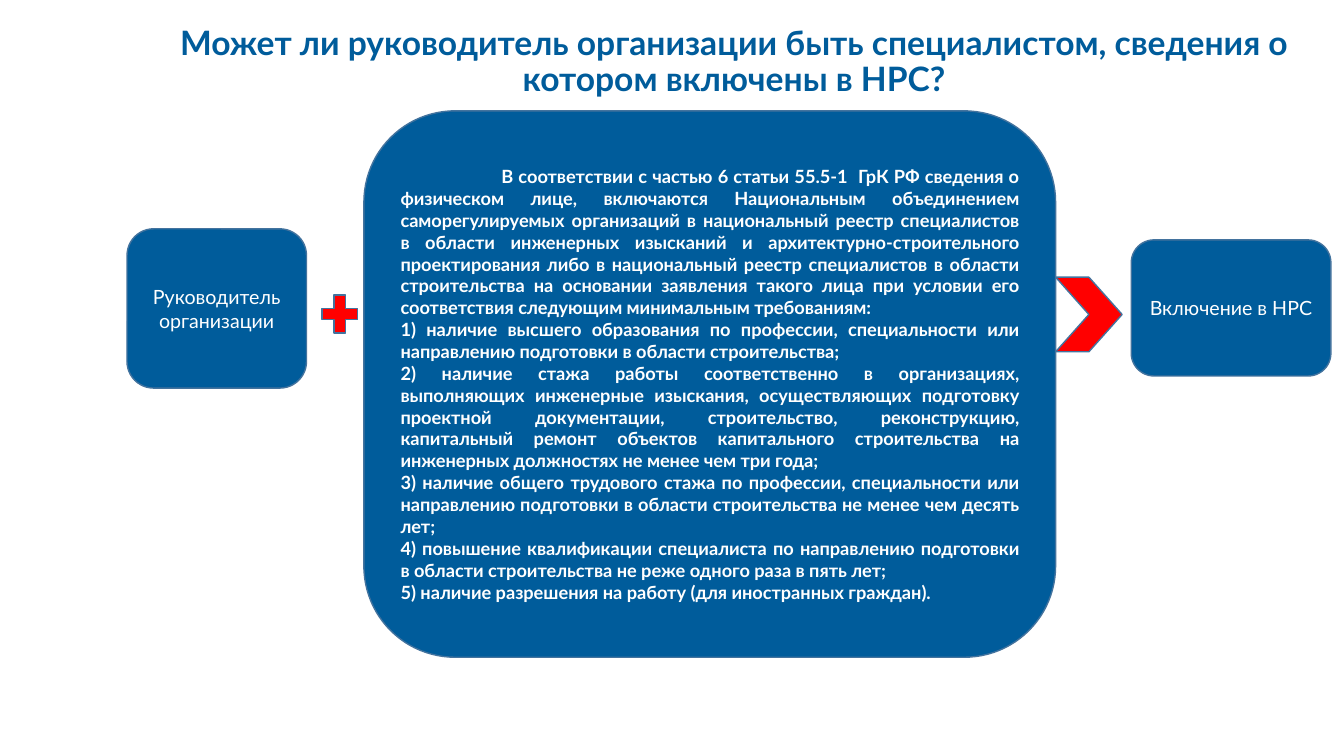
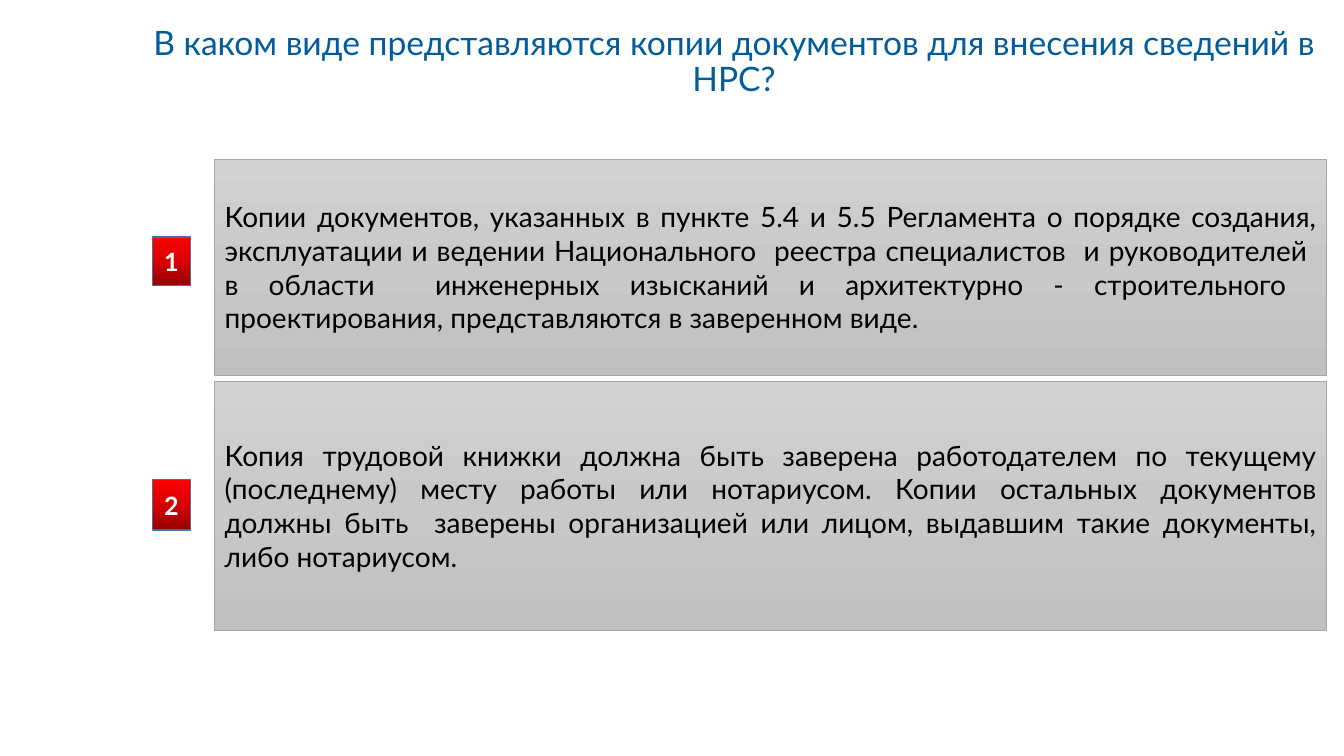
from pptx import Presentation
from pptx.dml.color import RGBColor
from pptx.enum.shapes import MSO_SHAPE
from pptx.enum.text import MSO_ANCHOR, MSO_AUTO_SIZE, PP_ALIGN
from pptx.oxml import parse_xml
from pptx.oxml.ns import nsdecls
from pptx.util import Inches, Pt


def color(code):
    return RGBColor.from_string(code)


BLUE, EDGE, RED, WHITE = "005C9B", "43739E", "FF0000", "FFFFFF"
RUBY = (270, ["970000", "D70000", RED])
GREY = (90, ["D2D2D2", "C8C8C8", "C0C0C0"])

HEAD = dict(size=24, bold=True, color=BLUE)
PLAIN = dict(HEAD, bold=False)
LABEL = dict(size=14, color=WHITE)
RULES = dict(size=13, bold=True, color=WHITE, align=PP_ALIGN.JUSTIFY)
MARK = dict(size=18, bold=True, color=WHITE)
NOTE = dict(size=20, color="000000", align=PP_ALIGN.JUSTIFY)


class Deck:
    font = "Lato"

    def __init__(self):
        self.file = Presentation()
        self.file.slide_width = Inches(13.33)
        self.file.slide_height = Inches(7.5)

    def start(self, text, style):
        self.slide = self.file.slides.add_slide(self.file.slide_layouts[5])
        title = self.slide.shapes.title
        self.place(title, 1.42, 0.14, 11.72, 0.96)
        self.label(title.text_frame, [text], style)
        title.text_frame.paragraphs[0].line_spacing = 0.9

    def place(self, shape, *box):
        for name, value in zip(("left", "top", "width", "height"), box):
            setattr(shape, name, Inches(value))

    def label(self, frame, lines, style, indent=0):
        form = dict(word_wrap=True, auto_size=MSO_AUTO_SIZE.NONE,
                    vertical_anchor=MSO_ANCHOR.MIDDLE)
        for name, value in form.items():
            setattr(frame, name, value)
        for i, line in enumerate(lines):
            para = frame.paragraphs[0] if i == 0 else frame.add_paragraph()
            para.alignment = style.get("align", PP_ALIGN.CENTER)
            if indent and i == 0:
                para._p.get_or_add_pPr().set("indent", str(Inches(indent)))
            run = para.add_run()
            run.text = line
            look = dict(name=self.font, size=Pt(style["size"]),
                        bold=style.get("bold", False))
            for name, value in look.items():
                setattr(run.font, name, value)
            run.font.color.rgb = color(style["color"])

    def shape(self, kind, box, fill, edge=EDGE, width=1):
        item = self.slide.shapes.add_shape(kind, *map(Inches, box))
        item.shadow.inherit = False
        item.line.color.rgb = color(edge)
        item.line.width = Pt(width)
        if isinstance(fill, str):
            item.fill.solid()
            item.fill.fore_color.rgb = color(fill)
        else:
            self.blend(item, *fill)
        return item

    def blend(self, item, angle, codes):
        stops = "".join(
            f'<a:gs pos="{i * 50000}"><a:srgbClr val="{code}"/></a:gs>'
            for i, code in enumerate(codes))
        item._element.spPr.insert(2, parse_xml(
            f'<a:gradFill {nsdecls("a")} rotWithShape="1">'
            f'<a:gsLst>{stops}</a:gsLst>'
            f'<a:lin ang="{angle * 60000}" scaled="0"/></a:gradFill>'))

    def card(self, box, lines, style, indent=0):
        item = self.shape(MSO_SHAPE.ROUNDED_RECTANGLE, box, BLUE)
        self.label(item.text_frame, lines, style, indent)

    def mark(self, box, text):
        item = self.shape(MSO_SHAPE.RECTANGLE, box, RUBY)
        self.label(item.text_frame, [text], MARK)

    def note(self, box, text):
        item = self.shape(MSO_SHAPE.RECTANGLE, box, GREY, "A5A5A5", 0.5)
        self.label(item.text_frame, [text], NOTE)


def main():
    deck = Deck()

    deck.start("Может ли руководитель организации быть специалистом, "
               "сведения о котором включены в НРС?", HEAD)
    deck.card((1.26, 2.27, 1.78, 1.58), ["Руководитель организации"], LABEL)
    deck.card((3.61, 1.1, 6.86, 5.42), [
        "В соответствии с частью 6 статьи 55.5-1  ГрК РФ сведения о "
        "физическом лице, включаются Национальным объединением "
        "саморегулируемых организаций в национальный реестр специалистов "
        "в области инженерных изысканий и архитектурно-строительного "
        "проектирования либо в национальный реестр специалистов в области "
        "строительства на основании заявления такого лица при условии его "
        "соответствия следующим минимальным требованиям:",
        "1) наличие высшего образования по профессии, специальности или "
        "направлению подготовки в области строительства;",
        "2) наличие стажа работы соответственно в организациях, "
        "выполняющих инженерные изыскания, осуществляющих подготовку "
        "проектной документации, строительство, реконструкцию, капитальный "
        "ремонт объектов капитального строительства на инженерных "
        "должностях не менее чем три года;",
        "3) наличие общего трудового стажа по профессии, специальности или "
        "направлению подготовки в области строительства не менее чем "
        "десять лет;",
        "4) повышение квалификации специалиста по направлению подготовки "
        "в области строительства не реже одного раза в пять лет;",
        "5) наличие разрешения на работу (для иностранных граждан).",
    ], RULES, indent=1)
    deck.card((11.22, 2.38, 1.98, 1.35), ["Включение в НРС"], LABEL)
    deck.shape(MSO_SHAPE.MATH_PLUS, (3.13, 2.86, 0.48, 0.51), RED)
    deck.shape(MSO_SHAPE.CHEVRON, (10.47, 2.75, 0.66, 0.74), RED)

    deck.start("В каком виде представляются копии документов для внесения "
               "сведений в НРС?", PLAIN)
    rows = [
        (1.58, 2.14, 2.35, 0.48,
         "Копии документов, указанных в пункте 5.4 и 5.5 Регламента о "
         "порядке создания, эксплуатации и ведении Национального  реестра "
         "специалистов  и руководителей  в области  инженерных изысканий и "
         "архитектурно - строительного  проектирования, представляются в "
         "заверенном виде."),
        (3.78, 2.47, 4.76, 0.5,
         "Копия трудовой книжки должна быть заверена работодателем по "
         "текущему (последнему) месту работы или нотариусом. Копии "
         "остальных документов должны быть  заверены организацией или "
         "лицом, выдавшим такие документы, либо нотариусом."),
    ]
    for i, (top, tall, y, high, text) in enumerate(rows, 1):
        deck.note((2.13, top, 11.03, tall), text)
        deck.mark((1.51, y, 0.38, high), str(i))

    deck.file.save("out.pptx")


if __name__ == "__main__":
    main()
